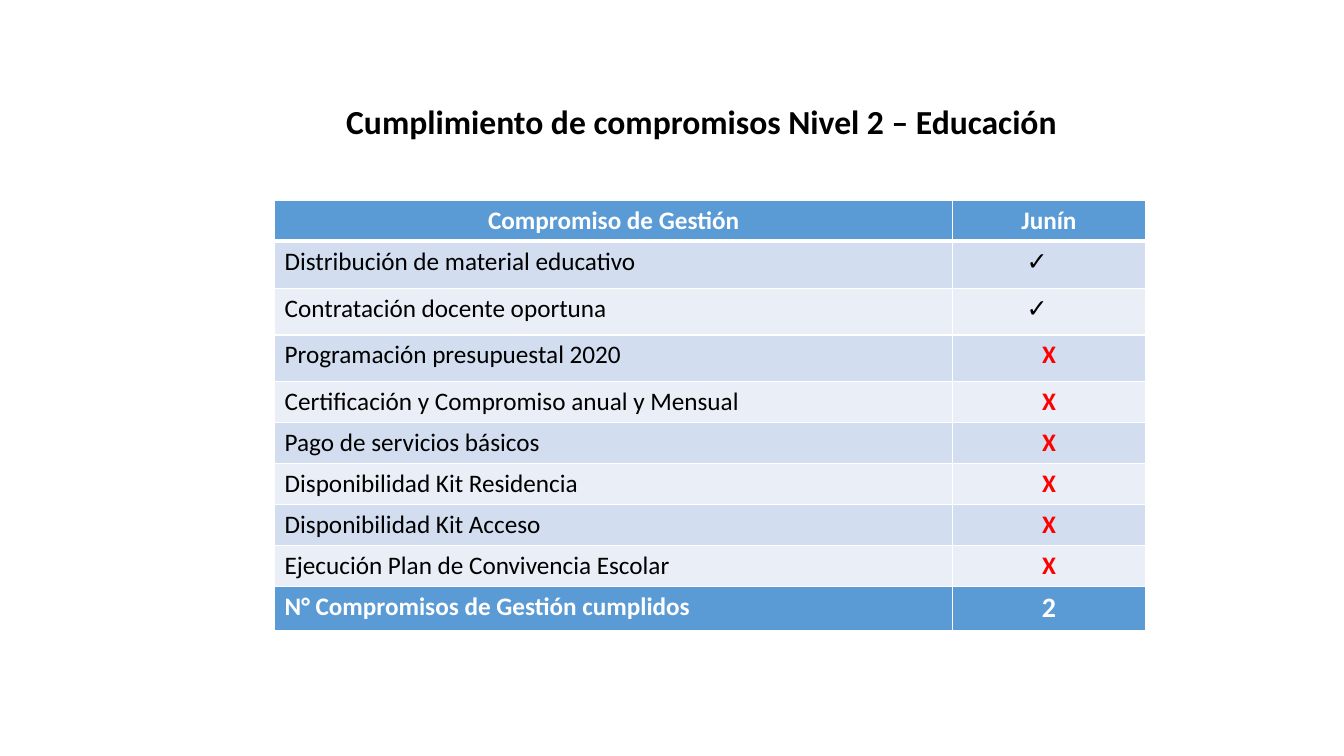
"""Builds the slide on compliance with level 2 education commitments."""
from dataclasses import dataclass

from lxml.etree import SubElement
from pptx import Presentation
from pptx.dml.color import RGBColor as Color
from pptx.enum.text import MSO_ANCHOR as Anchor, PP_ALIGN as Align
from pptx.oxml.ns import qn
from pptx.util import Cm, Pt


@dataclass(frozen=True)
class Theme:
    font: str = "Calibri"
    white: str = "FFFFFF"
    black: str = "000000"
    red: str = "FF0000"
    accent: str = "5B9BD5"
    bands: tuple = ("D2DEEF", "EAEFF7")
    title_size: int = 24
    body_size: int = 18
    total_size: int = 20
    thin: int = 1
    thick: int = 3


MET, MISSED = "✓", "X"
HEADER = ("Compromiso de Gestión", "Junín")
COMMITMENTS = (
    ("Distribución de material educativo", MET),
    ("Contratación docente oportuna", MET),
    ("Programación presupuestal 2020", MISSED),
    ("Certificación y Compromiso anual y Mensual", MISSED),
    ("Pago de servicios básicos", MISSED),
    ("Disponibilidad Kit Residencia", MISSED),
    ("Disponibilidad Kit Acceso", MISSED),
    ("Ejecución Plan de Convivencia Escolar", MISSED),
)
MET_COUNT = sum(status == MET for _, status in COMMITMENTS)
TOTAL = ("N° Compromisos de Gestión cumplidos", str(MET_COUNT))
COLUMN_WIDTHS = (17.09, 4.85)
ROW_HEIGHTS = (1.03, *[1.18] * 3, *[1.03] * 6)


class SlideBuilder:
    def __init__(self, deck, theme):
        self.theme = theme
        self.slide = deck.slides.add_slide(deck.slide_layouts[5])

    def set_text(self, frame, text, size, color, bold, align):
        para = frame.paragraphs[0]
        para.text = text
        para.alignment = align
        para.font.name = self.theme.font
        para.font.size = Pt(size)
        para.font.bold = bold
        para.font.color.rgb = Color.from_string(color)

    def title(self, text, left, top, width, height):
        box = self.slide.shapes.title
        box.left, box.top, box.width, box.height = map(Cm, (left, top, width, height))
        frame = box.text_frame
        frame.word_wrap = True
        frame.vertical_anchor = Anchor.TOP
        frame.margin_right = Cm(0.68)
        self.set_text(frame, text, self.theme.title_size, self.theme.black, True, Align.CENTER)

    def border(self, cell, bottom):
        properties = cell._tc.get_or_add_tcPr()
        thin = self.theme.thin
        for side, width in (("L", thin), ("R", thin), ("T", thin), ("B", bottom)):
            line = SubElement(properties, qn(f"a:ln{side}"), w=str(Pt(width)))
            fill = SubElement(line, qn("a:solidFill"))
            SubElement(fill, qn("a:srgbClr"), val=self.theme.white)

    def cell(self, cell, text, fill, size, color, bold, align, bottom):
        self.border(cell, bottom)
        cell.fill.solid()
        cell.fill.fore_color.rgb = Color.from_string(fill)
        self.set_text(cell.text_frame, text, size, color, bold, align)
        if text == MET:
            cell.margin_right = Cm(0.85)

    def table(self, left, top):
        theme = self.theme
        rows = (HEADER, *COMMITMENTS, TOTAL)
        last = len(rows) - 1
        table = self.slide.shapes.add_table(
            len(rows), len(HEADER), Cm(left), Cm(top),
            Cm(sum(COLUMN_WIDTHS)), Cm(sum(ROW_HEIGHTS))).table
        table.first_row = table.horz_banding = False
        for column, width in zip(table.columns, COLUMN_WIDTHS):
            column.width = Cm(width)
        for row, height in zip(table.rows, ROW_HEIGHTS):
            row.height = Cm(height)
        for r, values in enumerate(rows):
            strong = r in (0, last)
            fill = theme.accent if strong else theme.bands[(r - 1) % 2]
            bottom = theme.thick if r == 0 else theme.thin
            for c, text in enumerate(values):
                missed = text == MISSED
                color = theme.white if strong else theme.red if missed else theme.black
                size = theme.total_size if (r, c) == (last, 1) else theme.body_size
                align = Align.CENTER if r == 0 or c == 1 else Align.LEFT
                self.cell(table.cell(r, c), text, fill, size, color,
                          strong or missed, align, bottom)


def main():
    deck = Presentation()
    deck.slide_width, deck.slide_height = Cm(33.87), Cm(19.05)
    page = SlideBuilder(deck, Theme())
    page.table(6.92, 5.05)
    page.title("Cumplimiento de compromisos Nivel 2 – Educación", 5.92, 2.41, 23.95, 1.27)
    deck.save("out.pptx")


if __name__ == "__main__":
    main()
